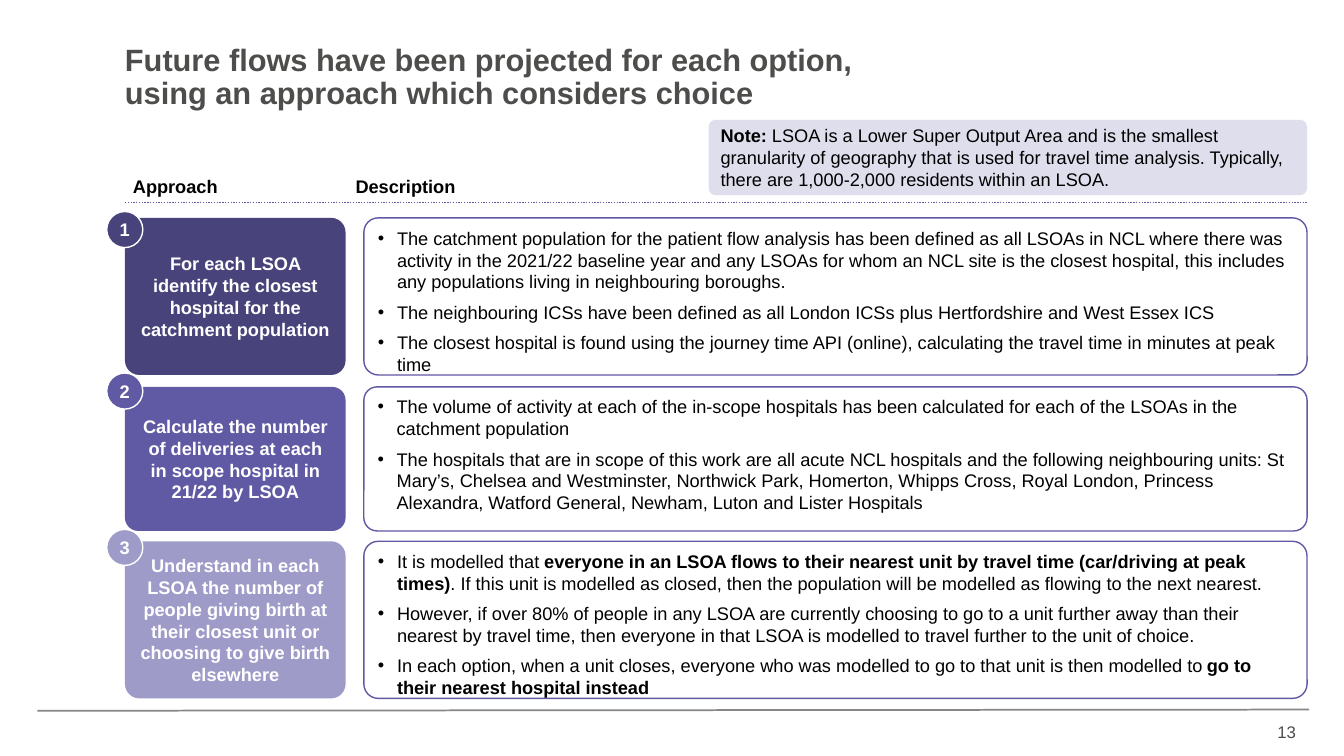
from lxml.etree import SubElement
from pptx import Presentation
from pptx.dml.color import RGBColor
from pptx.enum.dml import MSO_LINE
from pptx.enum.shapes import MSO_CONNECTOR, MSO_SHAPE
from pptx.enum.text import MSO_ANCHOR, MSO_AUTO_SIZE, PP_ALIGN
from pptx.oxml.ns import qn
from pptx.util import Cm, Pt

PURPLE = "6059A3"
GREY = "4D4D4C"
LEFT = 3.15
RIGHT = 32.94
DESCRIPTION_LEFT = 9.17
APPROACH_WIDTH = 5.56
BADGE_SIZE = 0.91
CORNER_RADIUS = 0.092


def add_box(kind, left, top, width, height, fill=None, line=None):
    shape = slide.shapes.add_shape(kind, Cm(left), Cm(top), Cm(width), Cm(height))
    shape.shadow.inherit = False
    if kind == MSO_SHAPE.ROUNDED_RECTANGLE:
        shape.adjustments[0] = CORNER_RADIUS
    if fill:
        shape.fill.solid()
        shape.fill.fore_color.rgb = RGBColor.from_string(fill)
    else:
        shape.fill.background()
    if line:
        shape.line.color.rgb = RGBColor.from_string(line)
        shape.line.width = Pt(1)
    else:
        shape.line.fill.background()
    return shape


def write(shape, paragraphs, color="000000", size=13, align=PP_ALIGN.LEFT,
          anchor=MSO_ANCHOR.MIDDLE, bullets=False):
    """Fill a shape with paragraphs, each a list of (text, bold) runs."""
    frame = shape.text_frame
    frame.word_wrap = True
    frame.vertical_anchor = anchor
    for index, runs in enumerate(paragraphs):
        paragraph = frame.paragraphs[0] if index == 0 else frame.add_paragraph()
        paragraph.alignment = align
        if bullets:
            properties = paragraph._p.get_or_add_pPr()
            properties.set("marL", str(Cm(0.48)))
            properties.set("indent", str(-Cm(0.48)))
            SubElement(properties, qn("a:buFont")).set("typeface", "Arial")
            SubElement(properties, qn("a:buChar")).set("char", "•")
            paragraph.space_after = Pt(6)
        for text, bold in runs:
            run = paragraph.add_run()
            run.text = text
            run.font.name = "Arial"
            run.font.size = Pt(size)
            run.font.bold = bold
            run.font.color.rgb = RGBColor.from_string(color)


presentation = Presentation()
presentation.slide_width = Cm(33.87)
presentation.slide_height = Cm(19.05)
slide = presentation.slides.add_slide(presentation.slide_layouts[5])

# Title
title = slide.shapes.title
title.left, title.top, title.width, title.height = Cm(LEFT), Cm(1.12), Cm(19.28), Cm(1.37)
frame = title.text_frame
frame.auto_size = MSO_AUTO_SIZE.NONE
frame.margin_left = frame.margin_right = frame.margin_top = frame.margin_bottom = 0
write(title, [[("Future flows have been projected for each option, "
                "using an approach which considers choice", True)]],
      color=GREY, size=22, anchor=MSO_ANCHOR.TOP)
frame.paragraphs[0].line_spacing = 0.9

# Footer rule and header rule
for start_x, start_y, end_x, end_y, color, width, dash in [
    (0.94, 17.91, 32.99, 17.88, "878787", 1.25, MSO_LINE.SOLID),
    (LEFT, 5.11, RIGHT, 5.11, PURPLE, 1, MSO_LINE.ROUND_DOT),
]:
    rule = slide.shapes.add_connector(
        MSO_CONNECTOR.STRAIGHT, Cm(start_x), Cm(start_y), Cm(end_x), Cm(end_y))
    rule.line.color.rgb = RGBColor.from_string(color)
    rule.line.width = Pt(width)
    rule.line.dash_style = dash
    SubElement(rule._element.spPr, qn("a:effectLst"))

# Page number
page_number = slide.shapes.add_textbox(Cm(30.73), Cm(18.06), Cm(2.18), Cm(0.76))
write(page_number, [[("13", False)]], color=GREY, size=12,
      align=PP_ALIGN.RIGHT, anchor=MSO_ANCHOR.TOP)

# Column headings
for heading, left in [("Approach", 3.1), ("Description", 8.71)]:
    heading_box = slide.shapes.add_textbox(Cm(left), Cm(4.37), Cm(APPROACH_WIDTH), Cm(0.64))
    write(heading_box, [[(heading, True)]])

# Note
note = add_box(MSO_SHAPE.ROUNDED_RECTANGLE, 17.86, 3.02, 15.08, 1.9, fill="DFDEED")
write(note, [[
    ("Note: ", True),
    ("LSOA is a Lower Super Output Area and is the smallest granularity of geography that is "
     "used for travel time analysis. Typically, there are 1,000-2,000 residents within an LSOA.",
     False),
]])

# Steps: top, height, badge top, colour, approach, description
steps = [
    (5.49, 3.96, 5.33, "48437A",
     "For each LSOA identify the closest hospital for the catchment population",
     [
         [("The catchment population for the patient flow analysis has been defined as all LSOAs "
           "in NCL where there was activity in the 2021/22 baseline year and any LSOAs for whom "
           "an NCL site is the closest hospital, this includes any populations living in "
           "neighbouring boroughs.", False)],
         [("The neighbouring ICSs have been defined as all London ICSs plus Hertfordshire and "
           "West Essex ICS", False)],
         [("The closest hospital is found using the journey time API (online), calculating the "
           "travel time in minutes at peak time", False)],
     ]),
    (9.75, 3.63, 9.4, PURPLE,
     "Calculate the number of deliveries at each in scope hospital in 21/22 by LSOA",
     [
         [("The volume of activity at each of the in-scope hospitals has been calculated for "
           "each of the LSOAs in the catchment population", False)],
         [("The hospitals that are in scope of this work are all acute NCL hospitals and the "
           "following neighbouring units: St Mary’s, Chelsea and Westminster, Northwick Park, "
           "Homerton, Whipps Cross, Royal London, Princess Alexandra, Watford General, Newham, "
           "Luton and Lister Hospitals", False)],
     ]),
    (13.64, 3.96, 13.34, "9F9BC8",
     "Understand in each LSOA the number of people giving birth at their closest unit or "
     "choosing to give birth elsewhere",
     [
         [("It is modelled that ", False),
          ("everyone in an LSOA flows to their nearest unit by travel time "
           "(car/driving at peak times)", True),
          (". If this unit is modelled as closed, then the population will be modelled as "
           "flowing to the next nearest.", False)],
         [("However, if over 80% of people in any LSOA are currently choosing to go to a unit "
           "further away than their nearest by travel time, then everyone in that LSOA is "
           "modelled to travel further to the unit of choice.", False)],
         [("In each option, when a unit closes, everyone who was modelled to go to that unit is "
           "then modelled to ", False),
          ("go to their nearest hospital instead", True)],
     ]),
]

for number, (top, height, badge_top, color, approach, description) in enumerate(steps, 1):
    approach_box = add_box(MSO_SHAPE.ROUNDED_RECTANGLE, LEFT, top, APPROACH_WIDTH, height,
                           fill=color)
    write(approach_box, [[(approach, True)]], color="FFFFFF", align=PP_ALIGN.CENTER)

    badge = add_box(MSO_SHAPE.OVAL, 2.69, badge_top, BADGE_SIZE, BADGE_SIZE,
                    fill=color, line="FFFFFF")
    badge.text_frame.margin_left = badge.text_frame.margin_right = 0
    write(badge, [[(str(number), True)]], color="FFFFFF", align=PP_ALIGN.CENTER)

    description_box = add_box(MSO_SHAPE.ROUNDED_RECTANGLE, DESCRIPTION_LEFT, top,
                              RIGHT - DESCRIPTION_LEFT, height, line=PURPLE)
    write(description_box, description, anchor=MSO_ANCHOR.TOP, bullets=True)

presentation.save("out.pptx")
